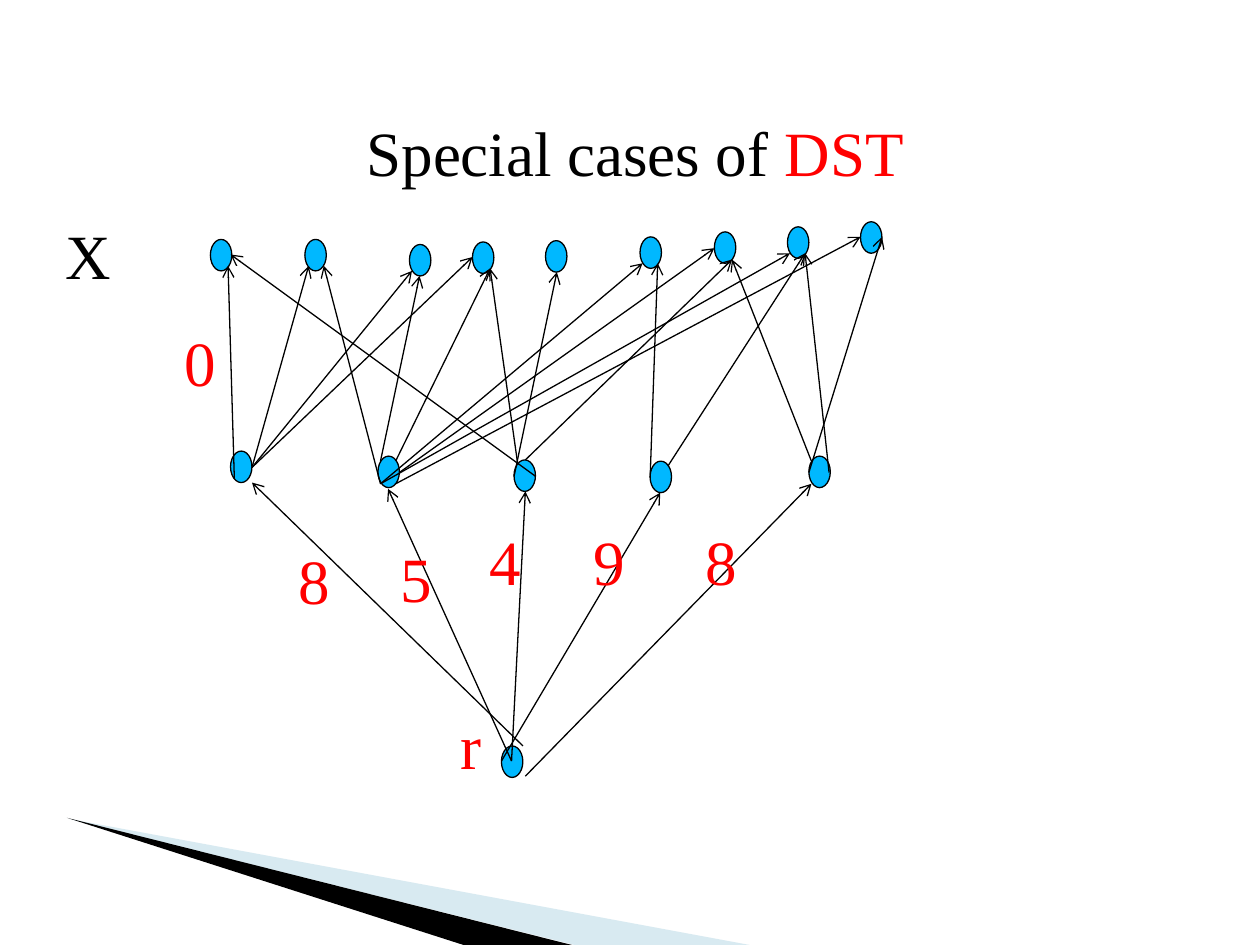
"""Build a slide showing a three-level directed Steiner tree graph."""
from lxml import etree
from pptx import Presentation
from pptx.dml.color import RGBColor
from pptx.enum.shapes import MSO_CONNECTOR, MSO_SHAPE
from pptx.enum.text import MSO_ANCHOR, MSO_AUTO_SIZE, PP_ALIGN
from pptx.oxml.ns import qn
from pptx.util import Inches, Pt

STRAIGHT = MSO_CONNECTOR.STRAIGHT
OVAL = MSO_SHAPE.OVAL
TOP = MSO_ANCHOR.TOP
NO_FIT = MSO_AUTO_SIZE.NONE
LEFT, CENTER = PP_ALIGN.LEFT, PP_ALIGN.CENTER
BLACK, RED, BLUE, PALE = "000000", "FF0000", "00B8FF", "9FCBDC"
TITLE_ONLY = 5


def color(code):
    """Turn a hex string into a colour."""
    return RGBColor.from_string(code)


def write(box, spans, align):
    """Fill a box with coloured spans of large serif text."""
    frame = box.text_frame
    layout = {"word_wrap": True, "auto_size": NO_FIT, "vertical_anchor": TOP,
              "margin_left": Inches(0.1), "margin_right": Inches(0.1),
              "margin_top": Inches(0.05), "margin_bottom": Inches(0.05)}
    for name, value in layout.items():
        setattr(frame, name, value)
    para = frame.paragraphs[0]
    para.alignment = align
    para.line_spacing = 1.0
    for text, code in spans:
        span = para.add_run()
        span.text = text
        for name, value in {"name": "Times New Roman", "size": Pt(36), "bold": False}.items():
            setattr(span.font, name, value)
        span.font.color.rgb = color(code)


deck = Presentation()
deck.slide_width, deck.slide_height = Inches(10), Inches(7.5)
page = deck.slides.add_slide(deck.slide_layouts[TITLE_ONLY])

title = page.shapes.title
title.left, title.top, title.width, title.height = map(Inches, (1.08, 0.85, 7.92, 0.7))
write(title, [("Special cases of ", BLACK), ("DST", RED)], CENTER)

wedges = [
    (PALE, 40, [(0.55, 6.5), (5.95, 7.5), (4.56, 7.5)]),
    (BLACK, 100, [(0.53, 6.49), (4.54, 7.5), (3.68, 7.5)]),
]
for code, opacity, points in wedges:
    corners = [(Inches(x), Inches(y)) for x, y in points]
    builder = page.shapes.build_freeform(*corners[0])
    builder.add_line_segments(corners[1:], close=True)
    wedge = builder.convert_to_shape()
    wedge.shadow.inherit = False
    wedge.fill.solid()
    wedge.fill.fore_color.rgb = color(code)
    wedge.line.fill.background()
    if opacity < 100:
        tint = wedge.fill._xPr.find(f".//{qn('a:srgbClr')}")
        etree.SubElement(tint, qn("a:alpha"), val=str(opacity * 1000))

terminals = [(1.67, 1.9), (2.42, 1.9), (3.25, 1.94), (3.75, 1.92), (4.33, 1.91),
             (5.08, 1.88), (5.67, 1.84), (6.25, 1.8), (6.83, 1.76)]
middles = [(1.83, 3.58), (3, 3.62), (4.08, 3.65), (5.16, 3.66), (6.42, 3.62)]
root = (3.98, 5.92)
for left, top in terminals + middles + [root]:
    node = page.shapes.add_shape(OVAL, Inches(left), Inches(top), Inches(0.17), Inches(0.25))
    node.shadow.inherit = False
    node.fill.solid()
    node.fill.fore_color.rgb = color(BLUE)
    node.line.color.rgb = color(BLACK)
    node.line.width = Pt(0.75)

root_edges = [
    (4.15, 5.92, 2, 3.83), (4.06, 6.04, 3.08, 3.88), (4.06, 6.04, 4.17, 3.9),
    (3.98, 6.04, 5.24, 3.91), (4.17, 6.16, 6.44, 3.84),
]
terminal_edges = [
    (1.86, 3.8, 1.81, 2.11), (2, 3.71, 2.45, 2.11), (2, 3.71, 3.27, 2.15),
    (2, 3.71, 3.75, 2.04),
    (3.02, 3.84, 2.57, 2.11), (3.02, 3.66, 3.33, 2.19), (3.14, 3.66, 3.89, 2.13),
    (3.02, 3.84, 5.1, 2.09), (3.17, 3.75, 5.67, 1.97), (3.02, 3.84, 6.27, 2.01),
    (3.14, 3.84, 6.83, 1.88),
    (4.25, 3.78, 1.83, 2.02), (4.11, 3.69, 3.89, 2.13), (4.08, 3.78, 4.42, 2.16),
    (4.17, 3.65, 5.81, 2.06),
    (5.3, 3.7, 6.39, 2.01), (5.16, 3.79, 5.22, 2.09),
    (6.44, 3.66, 5.81, 2.06), (6.58, 3.75, 6.39, 2.01), (6.42, 3.75, 7, 1.88),
]
for ends in root_edges + terminal_edges:
    edge = page.shapes.add_connector(STRAIGHT, *map(Inches, ends))
    edge.line.color.rgb = color(BLACK)
    edge.line.width = Pt(0.75)
    etree.SubElement(edge.line._get_or_add_ln(), qn("a:tailEnd"), type="arrow")
    etree.SubElement(edge._element.spPr, qn("a:effectLst"))

labels = [
    ("X", BLACK, 0.42, 1.67, 0.67), ("r", RED, 3.56, 5.56, 0.83), ("0", RED, 1.37, 2.52, 0.5),
    ("8", RED, 2.27, 4.25, 0.75), ("5", RED, 3.08, 4.23, 0.75), ("4", RED, 3.79, 4.1, 0.75),
    ("9", RED, 4.61, 4.1, 0.75), ("8", RED, 5.5, 4.1, 0.75),
]
for text, code, left, top, width in labels:
    label = page.shapes.add_textbox(Inches(left), Inches(top), Inches(width), Inches(0.7))
    write(label, [(text, code)], LEFT)

deck.save("out.pptx")
